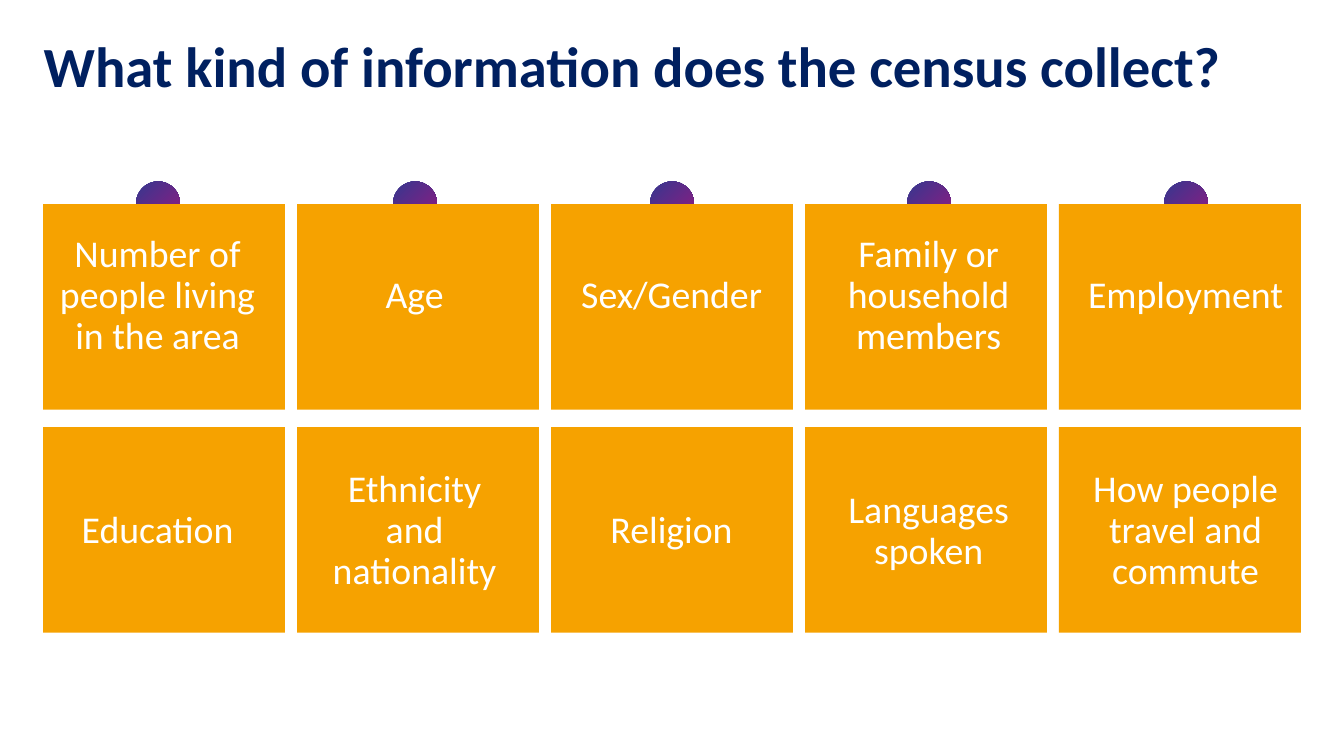
from dataclasses import dataclass

from pptx import Presentation, util as u
from pptx.dml.color import RGBColor
from pptx.enum import shapes, text


@dataclass(frozen=True)
class Theme:
    font: str = "Calibri"
    navy: str = "002060"
    amber: str = "F6A200"
    white: str = "FFFFFF"
    dot_start: str = "36378F"
    dot_end: str = "941B80"
    title_size: int = 54
    label_size: int = 36
    line_spacing: float = 0.9


@dataclass(frozen=True)
class Grid:
    """Evenly spaced cells, in inches."""
    left: float
    top: float
    column_pitch: float
    row_pitch: float
    width: float
    height: float

    def cell(self, column, row):
        return (self.left + column * self.column_pitch,
                self.top + row * self.row_pitch, self.width, self.height)


TILES = Grid(0.57, 2.7, 3.36, 2.95, 3.2, 2.72)
LABELS = Grid(0.57, 2.7, 3.4, 3.11, 3.03, 2.44)
DOTS = Grid(1.8, 2.4, 3.4, 0, 0.58, 0.58)

TOPICS = [
    ["Number of people living in the area", "Age", "Sex/Gender",
     "Family or household members", "Employment"],
    ["Education", "Ethnicity and nationality", "Religion",
     "Languages spoken", "How people travel and commute"],
]


def write(frame, wording, *, theme, size, color, bold=False,
          align=text.PP_ALIGN.LEFT, anchor=text.MSO_ANCHOR.MIDDLE,
          inset=(0.2, 0.2)):
    """Fill a text frame; inset is (horizontal, vertical) in inches."""
    frame.word_wrap = True
    frame.vertical_anchor = anchor
    frame.margin_left = frame.margin_right = u.Inches(inset[0])
    frame.margin_top = frame.margin_bottom = u.Inches(inset[1])
    paragraph = frame.paragraphs[0]
    paragraph.alignment = align
    paragraph.line_spacing = theme.line_spacing
    run = paragraph.add_run()
    run.text = wording
    run.font.name = theme.font
    run.font.size = u.Pt(size)
    run.font.bold = bold
    run.font.color.rgb = RGBColor.from_string(color)


class CensusSlide:
    def __init__(self, presentation, theme):
        self.theme = theme
        self.slide = presentation.slides.add_slide(presentation.slide_layouts[6])

    def _shape(self, kind, box):
        shape = self.slide.shapes.add_shape(kind, *map(u.Inches, box))
        shape.shadow.inherit = False
        shape.line.fill.background()
        return shape

    def _text(self, wording, box, **style):
        holder = self.slide.shapes.add_textbox(*map(u.Inches, box))
        write(holder.text_frame, wording, theme=self.theme, **style)

    def title(self, wording, box):
        self._text(wording, box, size=self.theme.title_size,
                   color=self.theme.navy, bold=True,
                   anchor=text.MSO_ANCHOR.TOP, inset=(0.1, 0))

    def dot(self, column):
        fill = self._shape(shapes.MSO_SHAPE.OVAL, DOTS.cell(column, 0)).fill
        fill.gradient()
        fill.gradient_angle = 315
        for stop, color in zip(fill.gradient_stops,
                               (self.theme.dot_start, self.theme.dot_end)):
            stop.color.rgb = RGBColor.from_string(color)

    def tile(self, column, row):
        tile = self._shape(shapes.MSO_SHAPE.RECTANGLE, TILES.cell(column, row))
        tile.fill.solid()
        tile.fill.fore_color.rgb = RGBColor.from_string(self.theme.amber)

    def label(self, topic, column, row):
        self._text(topic, LABELS.cell(column, row), size=self.theme.label_size,
                   color=self.theme.white, align=text.PP_ALIGN.CENTER)


def main():
    presentation = Presentation()
    presentation.slide_width = u.Inches(17.78)
    presentation.slide_height = u.Inches(10)
    census = CensusSlide(presentation, Theme())

    for column in range(len(TOPICS[0])):
        census.dot(column)
    census.title("What kind of information does the census collect?",
                 (0.48, 0.51, 16.08, 1.45))
    for row, topics in enumerate(TOPICS):
        for column, topic in enumerate(topics):
            census.tile(column, row)
            census.label(topic, column, row)

    presentation.save("out.pptx")


if __name__ == "__main__":
    main()
